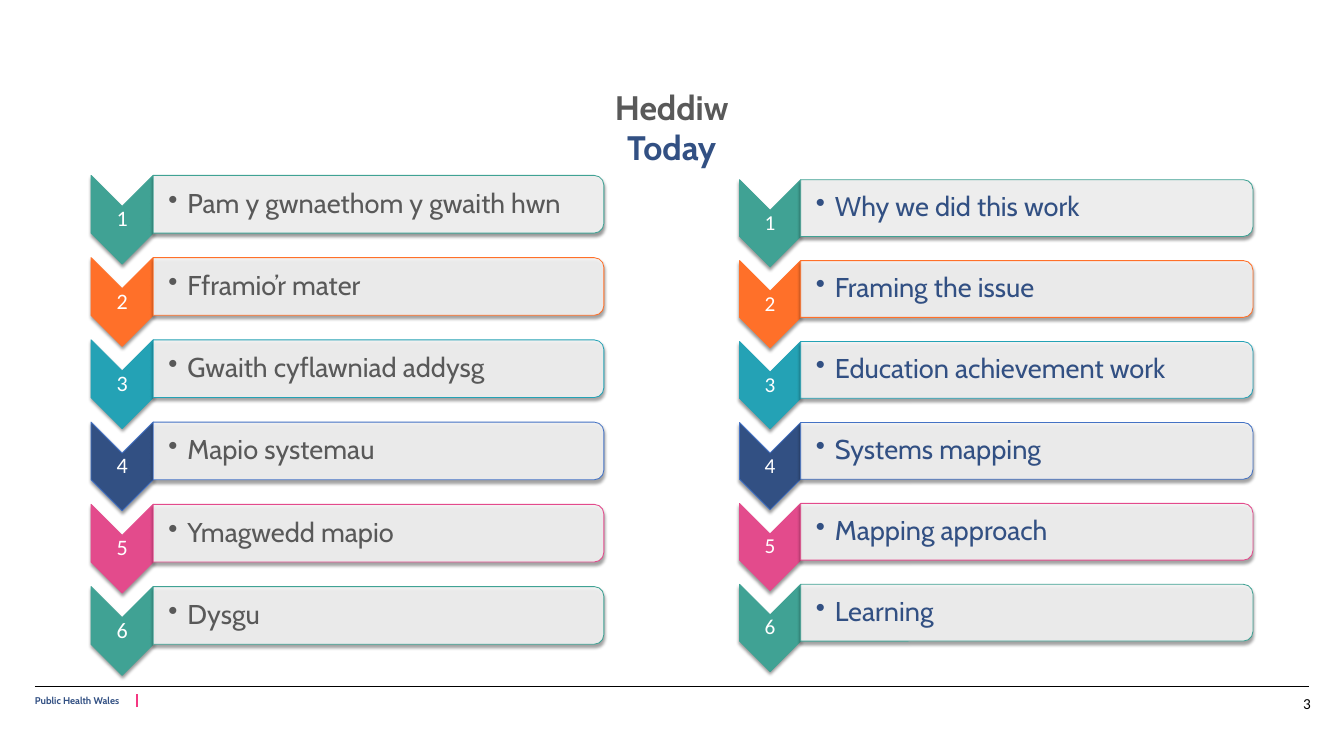
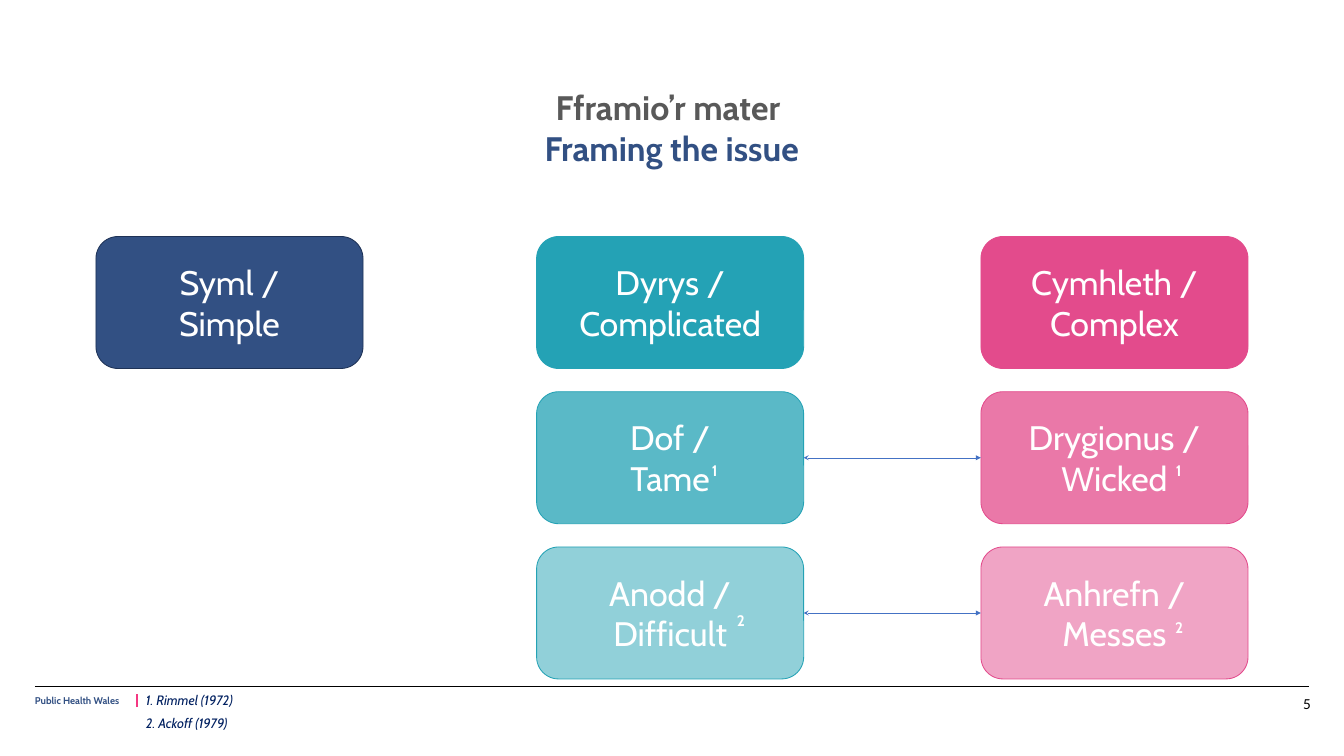
"""Build two bilingual slides: an agenda and a framing of problem types."""
from collections import namedtuple

from lxml import etree
from pptx import Presentation
from pptx.dml.color import RGBColor
from pptx.enum.shapes import MSO_CONNECTOR, MSO_SHAPE
from pptx.enum.text import MSO_ANCHOR, PP_ALIGN
from pptx.oxml.ns import qn
from pptx.util import Inches, Pt

CHEVRON = MSO_SHAPE.CHEVRON
BAR = MSO_SHAPE.ROUND_2_SAME_RECTANGLE
CARD = MSO_SHAPE.ROUNDED_RECTANGLE
STRAIGHT = MSO_CONNECTOR.STRAIGHT
TOP, MIDDLE = MSO_ANCHOR.TOP, MSO_ANCHOR.MIDDLE
LEFT, CENTER = PP_ALIGN.LEFT, PP_ALIGN.CENTER

COLORS = {
    "navy": "325083", "navy_edge": "1E3256", "blue": "4472C4", "grey": "595959",
    "green": "40A294", "orange": "FF7029", "teal": "24A2B5", "pink": "E34B8C",
    "first_bar": "EDEDED", "bar": "F2F2F2", "tick": "F43882", "note": "002060",
    "black": "000000", "white": "FFFFFF",
}
HEADING_FONT, NUMBER_FONT = "Cabin", "Calibri"
RIGHT_SIDE, LEFT_SIDE = 3, 1

Box = namedtuple("Box", "left top width height")

STEP_COLORS = [("green", "green"), ("orange", "orange"), ("teal", "teal"),
               ("navy", "blue"), ("pink", "pink"), ("green", "green")]
WELSH_STEPS = ["Pam y gwnaethom y gwaith hwn", "Fframio’r mater",
               "Gwaith cyflawniad addysg", "Mapio systemau",
               "Ymagwedd mapio", "Dysgu"]
ENGLISH_STEPS = ["Why we did this work", "Framing the issue",
                 "Education achievement work", "Systems mapping",
                 "Mapping approach", "Learning"]
PROBLEM_COLUMNS = [
    (0, "navy", "navy_edge", ["Syml /\nSimple"]),
    (7.21, "teal", "teal",
     ["Dyrys /\nComplicated", "Dof /\nTame", "Anodd /\nDifficult"]),
    (14.48, "pink", "pink",
     ["Cymhleth /\nComplex", "Drygionus /\nWicked", "Anhrefn / Messes"]),
]
CARD_OPACITY = [100, 75, 50]
NOTE_MARKS = [("1", 9.98, 3.62), ("1", 17.57, 3.62),
              ("2", 10.39, 6.09), ("2", 17.56, 6.19)]
NOTES = ["1. Rimmel (1972)", "2. Ackoff (1979)"]


def rgb(name):
    """Return the palette colour of that name."""
    return RGBColor.from_string(COLORS[name])


def inches(box):
    """Return the four lengths of a box in inches."""
    return [Inches(value) for value in box]


def write(frame, text, size, colors, font=HEADING_FONT, bold=False,
          italic=False, align=LEFT, spacing=None):
    """Fill a text frame, one colour per paragraph, the last one repeating."""
    frame.text = text
    for index, paragraph in enumerate(frame.paragraphs):
        paragraph.alignment = align
        paragraph.line_spacing = spacing
        for run in paragraph.runs:
            run.font.name = font
            run.font.size = Pt(size)
            run.font.bold = bold
            run.font.italic = italic
            run.font.color.rgb = rgb(colors[min(index, len(colors) - 1)])


def add_text(slide, box, text, size, colors, insets=(0, 0, 0, 0), anchor=TOP,
             wrap=True, **style):
    """Add a text box and return its frame."""
    frame = slide.shapes.add_textbox(*inches(box)).text_frame
    frame.word_wrap = wrap
    frame.vertical_anchor = anchor
    (frame.margin_left, frame.margin_top,
     frame.margin_right, frame.margin_bottom) = inches(insets)
    write(frame, text, size, colors, **style)
    return frame


def add_panel(slide, preset, box, fill, edge, opacity=100):
    """Add a filled and outlined preset shape without a shadow."""
    panel = slide.shapes.add_shape(preset, *inches(box))
    panel.shadow.inherit = False
    panel.fill.solid()
    panel.fill.fore_color.rgb = rgb(fill)
    panel.line.color.rgb = rgb(edge)
    panel.line.width = Pt(1)
    if opacity < 100:
        color = panel._element.spPr.find(qn("a:solidFill"))[0]
        etree.SubElement(color, qn("a:alpha"), val=str(opacity * 1000))
    return panel


def add_turned_panel(slide, preset, box, *paint):
    """Add a shaded preset shape turned a quarter, which then covers the box."""
    center_x, center_y = box.left + box.width / 2, box.top + box.height / 2
    upright = Box(center_x - box.height / 2, center_y - box.width / 2,
                  box.height, box.width)
    panel = add_panel(slide, preset, upright, *paint)
    panel.rotation = 90
    effects = panel._element.spPr.find(qn("a:effectLst"))
    shade = etree.SubElement(effects, qn("a:outerShdw"), blurRad=str(Pt(4)),
                             dist=str(Pt(3)), dir="5400000", rotWithShape="0")
    color = etree.SubElement(shade, qn("a:srgbClr"), val=COLORS["black"])
    etree.SubElement(color, qn("a:alpha"), val="40000")


def add_line(slide, start, end, color, width):
    """Add a straight line without a shadow."""
    line = slide.shapes.add_connector(STRAIGHT, *inches(start + end))
    line.line.color.rgb = rgb(color)
    line.line.width = Pt(width)
    etree.SubElement(line._element.spPr, qn("a:effectLst"))
    return line


def add_frame(deck, title, title_box, number):
    """Add a slide with its two-language title and the shared footer."""
    slide = deck.slides.add_slide(deck.slide_layouts[6])
    add_line(slide, (0.57, 11.22), (21.41, 11.22), "black", 0.41)
    add_line(slide, (2.24, 11.57), (2.24, 11.36), "tick", 1.65)
    add_text(slide, title_box, title, 40, ["grey", "navy"], bold=True,
             align=CENTER)
    add_text(slide, Box(0.57, 11.36, 1.55, 0.21), "Public Health Wales", 11.5,
             ["navy"], bold=True)
    add_text(slide, Box(21.32, 11.36, 0.19, 0.21), number, 18, ["black"],
             font=NUMBER_FONT)
    return slide


def add_bullet(paragraph):
    """Give a paragraph a hanging round bullet."""
    properties = paragraph._p.get_or_add_pPr()
    properties.set("marL", str(Inches(0.31)))
    properties.set("indent", str(Inches(-0.31)))
    etree.SubElement(properties, qn("a:buChar"), char="•")


def add_steps(slide, box, steps, color, number_size):
    """Stack numbered chevrons with labelled bars evenly in the box."""
    chevron_height = box.height * 0.1775
    chevron_width = chevron_height * 0.7
    bar_height = chevron_height * 0.65
    pitch = (box.height - chevron_height) / (len(steps) - 1)
    bar_left = box.left + chevron_width
    bar_width = box.width - chevron_width
    for index, (step, (fill, edge)) in enumerate(zip(steps, STEP_COLORS)):
        top = box.top + index * pitch
        chevron = Box(box.left, top, chevron_width, chevron_height)
        bar = Box(bar_left, top, bar_width, bar_height)
        bar_paint = ("bar", edge, 90) if index else ("first_bar", edge)
        add_turned_panel(slide, CHEVRON, chevron, fill, edge)
        add_text(slide, Box(box.left, top + chevron_width / 2, chevron_width,
                            chevron_height - chevron_width),
                 str(index + 1), number_size, ["white"], (0.02,) * 4, MIDDLE,
                 font=NUMBER_FONT, align=CENTER, spacing=0.9)
        add_turned_panel(slide, BAR, bar, *bar_paint)
        label = add_text(slide, bar, step, 32, [color],
                         (0.25, 0.02, 0.02, 0.02), MIDDLE, spacing=0.9)
        add_bullet(label.paragraphs[0])


def add_double_arrow(slide, source, target):
    """Join the facing sides of two cards with a two-headed arrow."""
    arrow = add_line(slide, (0, 0), (0, 0), "blue", 0.5)
    arrow.begin_connect(source, RIGHT_SIDE)
    arrow.end_connect(target, LEFT_SIDE)
    outline = arrow.line._get_or_add_ln()
    etree.SubElement(outline, qn("a:headEnd"), type="stealth")
    etree.SubElement(outline, qn("a:tailEnd"), type="triangle")


def add_problem_grid(slide, box):
    """Place the problem cards in columns, with arrows and note marks."""
    card_width, card_height, pitch = 4.37, 2.16, (box.height - 2.16) / 2
    columns = []
    for offset, fill, edge, names in PROBLEM_COLUMNS:
        cards = []
        for row, (name, opacity) in enumerate(zip(names, CARD_OPACITY)):
            place = Box(box.left + offset, box.top + row * pitch,
                        card_width, card_height)
            card = add_panel(slide, CARD, place, fill, edge, opacity)
            card.text_frame.word_wrap = True
            card.text_frame.vertical_anchor = MIDDLE
            write(card.text_frame, name, 40, ["white"], align=CENTER)
            cards.append(card)
        columns.append(cards)
    for source, target in list(zip(columns[1], columns[2]))[1:]:
        add_double_arrow(slide, source, target)
    for mark, x, y in NOTE_MARKS:
        add_text(slide, Box(box.left + x, box.top + y, 0.29, 0.4), mark, 18,
                 ["white"], (0.1, 0.05, 0.1, 0.05), wrap=False, bold=True)


def add_notes(slide, box):
    """List the references below the footer rule."""
    line_height = box.height / len(NOTES)
    for index, note in enumerate(NOTES):
        add_text(slide, Box(box.left, box.top + index * line_height,
                            box.width, line_height), note, 16, ["note"],
                 (0.1, 0.05, 0.1, 0.05), wrap=False, italic=True)


def build_agenda(deck):
    """Build the agenda slide."""
    slide = add_frame(deck, "Heddiw\nToday", Box(5.68, 1.41, 10.62, 1.35), "3")
    add_steps(slide, Box(12.1, 2.94, 8.4, 8.05), ENGLISH_STEPS, "navy", 25)
    add_steps(slide, Box(1.49, 2.87, 8.39, 8.18), WELSH_STEPS, "grey", 26)


def build_framing(deck):
    """Build the slide that frames the issue."""
    slide = add_frame(deck, "Fframio’r mater \nFraming the issue",
                      Box(4.67, 1.42, 12.64, 1.35), "5")
    add_problem_grid(slide, Box(1.57, 3.87, 18.85, 7.24))
    add_notes(slide, Box(2.29, 11.28, 1.96, 0.74))


def main():
    """Build and save the deck."""
    deck = Presentation()
    deck.slide_width, deck.slide_height = Inches(21.99), Inches(12.37)
    build_agenda(deck)
    build_framing(deck)
    deck.save("out.pptx")


if __name__ == "__main__":
    main()
